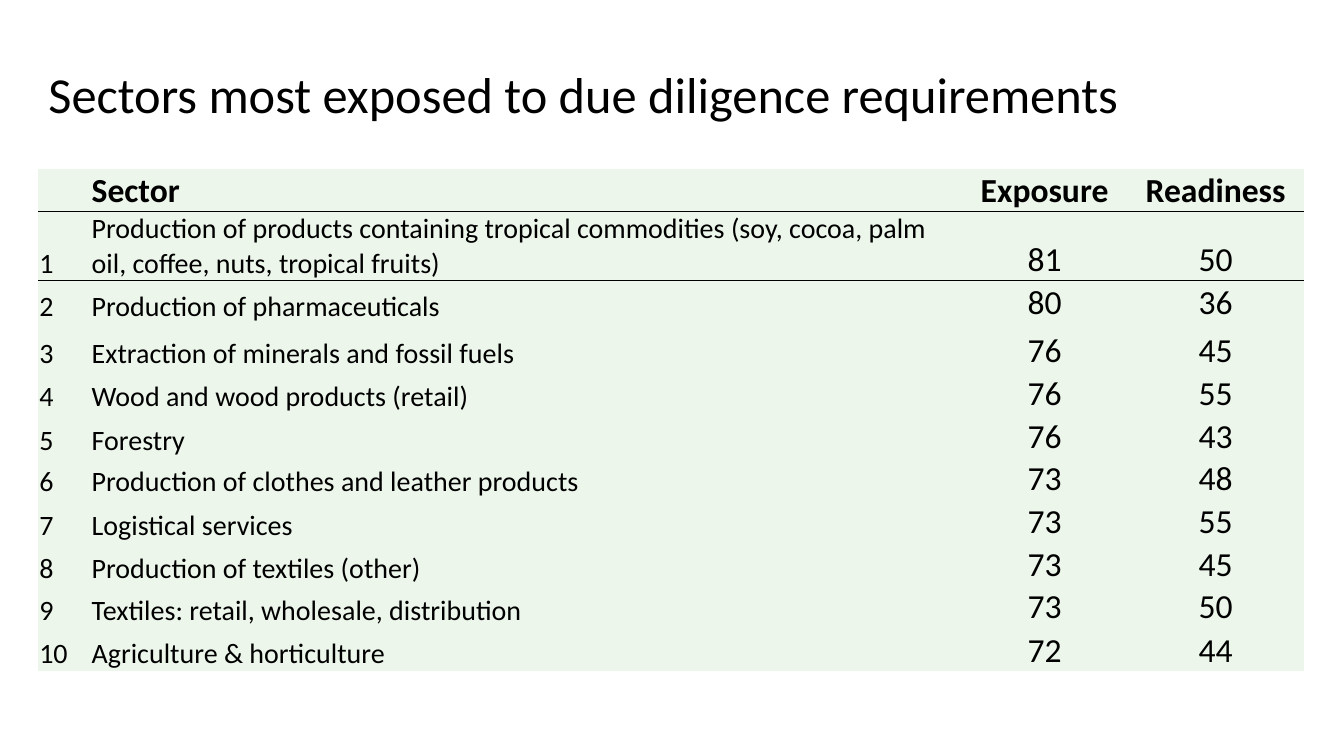
import pptx
import pptx.dml.color
import pptx.enum.text
import pptx.oxml
import pptx.oxml.ns
import pptx.util
from pptx.util import Cm

TITLE = "Sectors most exposed to due diligence requirements"
HEADINGS = ("", "Sector", "Exposure", "Readiness")
SECTORS = [
    ("Production of products containing tropical commodities "
     "(soy, cocoa, palm oil, coffee, nuts, tropical fruits)", 81, 50),
    ("Production of pharmaceuticals", 80, 36),
    ("Extraction of minerals and fossil fuels", 76, 45),
    ("Wood and wood products (retail)", 76, 55),
    ("Forestry", 76, 43),
    ("Production of clothes and leather products", 73, 48),
    ("Logistical services", 73, 55),
    ("Production of textiles (other)", 73, 45),
    ("Textiles: retail, wholesale, distribution", 73, 50),
    ("Agriculture & horticulture", 72, 44),
]
COLUMN_WIDTHS = (1.32, 21.95, 4.17, 4.45)
ROW_HEIGHTS = (1.02, 1.75, 1.09, 1.19, 1.09, 1.09, 1.04, 1.09, 1.09, 1.04, 1.09)
RULED_ROWS = (0, 1)
LEFT = 0.97

THEME = {
    "font": "Calibri",
    "text": "000000",
    "fill": "ECF6EA",
    "title": 36,
    "large": 24,
    "body": 20,
    "rule": 1,
    "table_style": "{2D5ABB26-0587-4C30-8999-92F81FD0307C}",
}


def color(name):
    return pptx.dml.color.RGBColor.from_string(THEME[name])


def style_text(paragraph, size, bold=False):
    font = paragraph.font
    font.name = THEME["font"]
    font.size = pptx.util.Pt(THEME[size])
    font.bold = bold
    font.color.rgb = color("text")


def rule_below(cell):
    rule = pptx.oxml.parse_xml(
        f'<a:lnB {pptx.oxml.ns.nsdecls("a")} w="{pptx.util.Pt(THEME["rule"])}">'
        f'<a:solidFill><a:srgbClr val="{THEME["text"]}"/></a:solidFill></a:lnB>'
    )
    cell._tc.get_or_add_tcPr().insert(0, rule)


def add_title(slide):
    title = slide.shapes.add_textbox(Cm(LEFT), Cm(0.48), Cm(30.07), Cm(2.77)).text_frame
    title.word_wrap = True
    title.vertical_anchor = pptx.enum.text.MSO_ANCHOR.BOTTOM
    heading = title.paragraphs[0]
    heading.text = TITLE
    heading.line_spacing = 0.9
    style_text(heading, "title")


def fill_cell(cell, value, row, column):
    is_score = column >= 2
    cell.fill.solid()
    cell.fill.fore_color.rgb = color("fill")
    cell.vertical_anchor = pptx.enum.text.MSO_ANCHOR.BOTTOM
    cell.margin_left = cell.margin_right = cell.margin_top = Cm(0.02)
    cell.margin_bottom = 0
    entry = cell.text_frame.paragraphs[0]
    entry.text = str(value)
    if is_score:
        entry.alignment = pptx.enum.text.PP_ALIGN.CENTER
    style_text(entry, "large" if row == 0 or is_score else "body", row == 0)
    if row in RULED_ROWS:
        rule_below(cell)


def add_ranking(slide):
    rows = [HEADINGS] + [(rank, *sector) for rank, sector in enumerate(SECTORS, 1)]
    ranking = slide.shapes.add_table(
        len(rows), len(HEADINGS), Cm(LEFT), Cm(4.27),
        Cm(sum(COLUMN_WIDTHS)), Cm(sum(ROW_HEIGHTS)),
    ).table
    ranking.first_row = ranking.horz_banding = False
    ranking._tbl.tblPr.find(pptx.oxml.ns.qn("a:tableStyleId")).text = THEME["table_style"]
    for column, width in zip(ranking.columns, COLUMN_WIDTHS):
        column.width = Cm(width)
    for row, height in zip(ranking.rows, ROW_HEIGHTS):
        row.height = Cm(height)
    for r, values in enumerate(rows):
        for c, value in enumerate(values):
            fill_cell(ranking.cell(r, c), value, r, c)


def main():
    presentation = pptx.Presentation()
    presentation.slide_width = Cm(33.87)
    presentation.slide_height = Cm(19.05)
    slide = presentation.slides.add_slide(presentation.slide_layouts[6])
    add_ranking(slide)
    add_title(slide)
    presentation.save("out.pptx")


if __name__ == "__main__":
    main()
